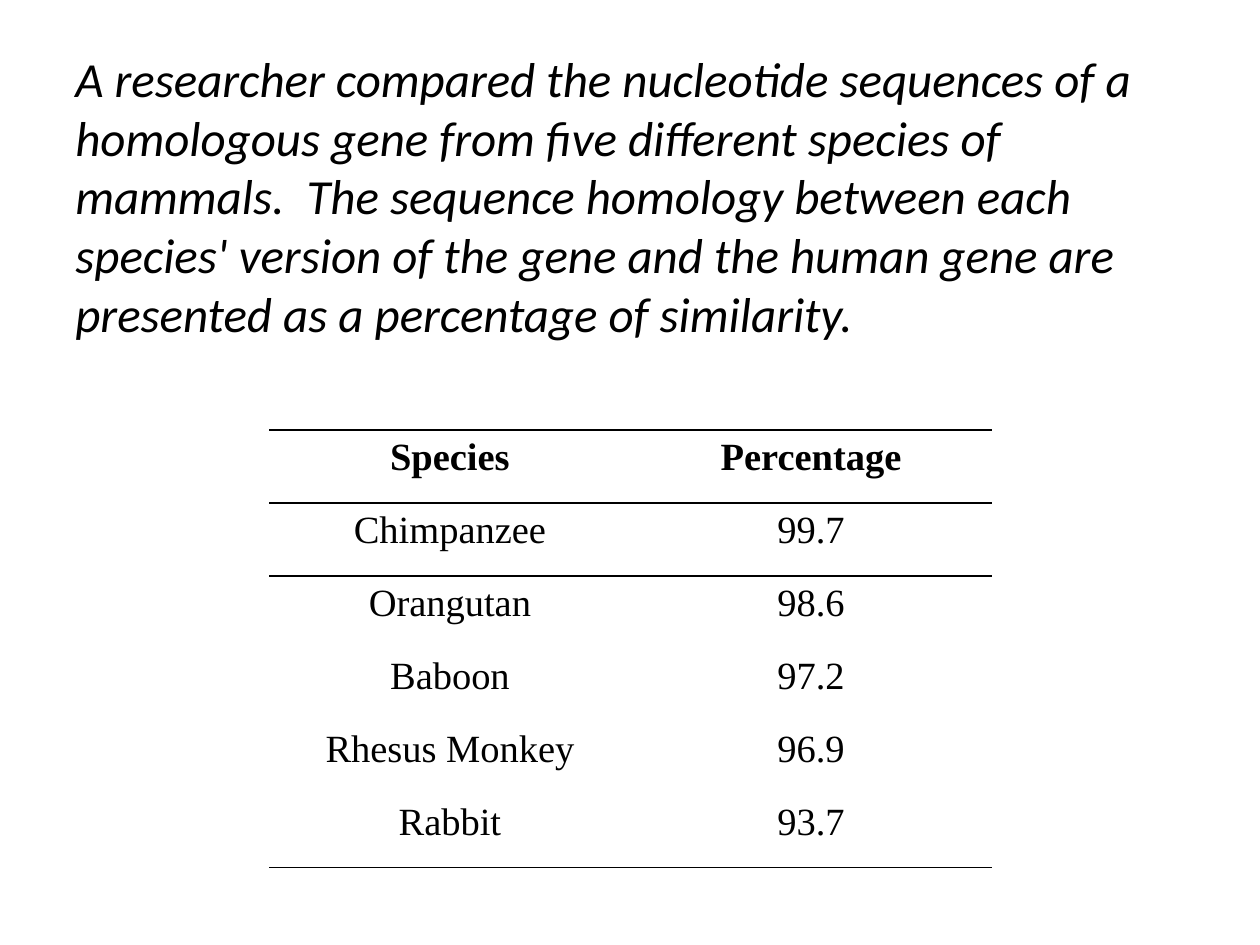
"""Build a slide comparing gene homology of five mammals with humans."""
from lxml import etree
from pptx import Presentation
from pptx.dml.color import RGBColor
from pptx.enum.text import PP_ALIGN
from pptx.oxml.ns import qn
from pptx.util import Cm, Pt

CENTER = PP_ALIGN.CENTER
COLORS = {"text": "000000", "rule": "000000"}
NO_STYLE = "{2D5ABB26-0587-4C30-8999-92F81FD0307C}"
INTRO = (
    "A researcher compared the nucleotide sequences of a homologous gene "
    "from five different species of mammals.  The sequence homology between "
    "each species' version of the gene and the human gene are presented as "
    "a percentage of similarity."
)
ROWS = [
    ("Species", "Percentage"),
    ("Chimpanzee", "99.7"),
    ("Orangutan", "98.6"),
    ("Baboon", "97.2"),
    ("Rhesus Monkey", "96.9"),
    ("Rabbit", "93.7"),
]
BORDERS = {0: ("lnT", "lnB"), 1: ("lnT",), len(ROWS) - 1: ("lnB",)}


def add_run(p, text, font, size, bold=False, italic=False):
    r = p.add_run()
    r.text = text
    r.font.name = font
    r.font.size = Pt(size)
    r.font.bold = bold
    r.font.italic = italic
    r.font.color.rgb = RGBColor.from_string(COLORS["text"])


def add_border(cell, side):
    ln = etree.SubElement(cell._tc.get_or_add_tcPr(), qn(f"a:{side}"), w=str(Pt(1)))
    fill = etree.SubElement(ln, qn("a:solidFill"))
    etree.SubElement(fill, qn("a:srgbClr"), val=COLORS["rule"])


prs = Presentation()
prs.slide_width = Cm(25.4)
prs.slide_height = Cm(19.05)
s = prs.slides.add_slide(prs.slide_layouts[6])

sp = s.shapes.add_textbox(Cm(1.27), Cm(0.85), Cm(22.86), Cm(8.04))
tf = sp.text_frame
tf.word_wrap = True
add_run(tf.paragraphs[0], INTRO, "Calibri", 28, italic=True)

frame = s.shapes.add_table(len(ROWS), 2, Cm(5.43), Cm(8.67), Cm(14.56), Cm(8.82))
table = frame.table
table.first_row = False
table.horz_banding = False
table._tbl.tblPr.find(qn("a:tableStyleId")).text = NO_STYLE

for i, values in enumerate(ROWS):
    for j, value in enumerate(values):
        cell = table.cell(i, j)
        for side in BORDERS.get(i, ()):
            add_border(cell, side)
        cell.fill.background()
        p = cell.text_frame.paragraphs[0]
        p.alignment = CENTER
        add_run(p, value, "Times New Roman", 22, bold=i == 0)

prs.save("out.pptx")
